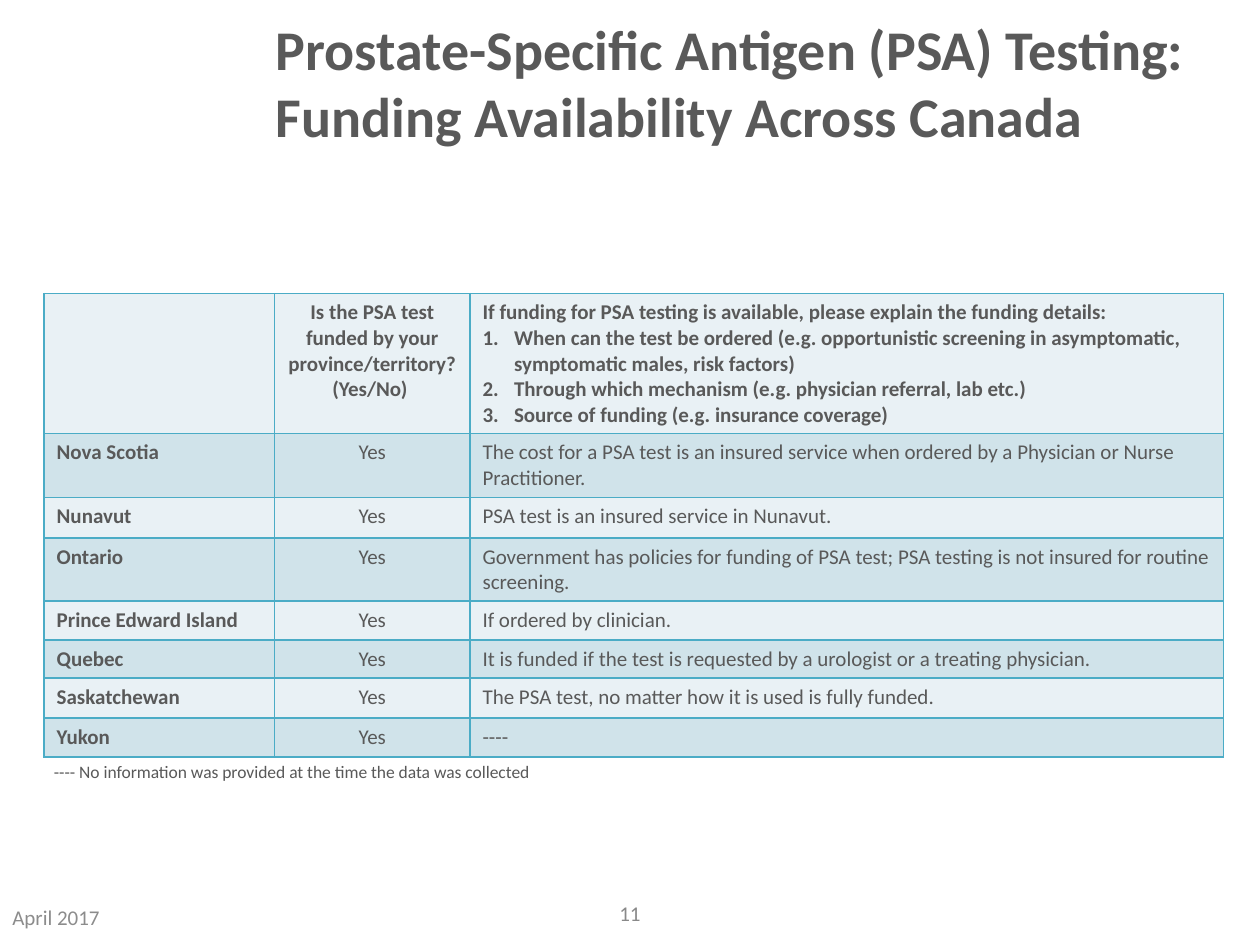
from dataclasses import dataclass

from lxml.etree import SubElement
from pptx import Presentation
from pptx.dml.color import RGBColor
from pptx.enum.text import MSO_ANCHOR as Anchor, PP_ALIGN as Align
from pptx.oxml.ns import qn
from pptx.util import Inches, Pt


@dataclass(frozen=True)
class Theme:
    font: str = "Calibri"
    text: str = "595959"
    date: str = "8C8C8C"
    number: str = "898989"
    border: str = "4BACC6"
    light_row: str = "E9F1F5"
    dark_row: str = "D0E3EA"
    title_size: int = 32
    body_size: int = 12
    note_size: int = 10


THEME = Theme()

COLUMN_WIDTHS = [1.83, 1.55, 5.98]
ROW_HEIGHTS = [1.11, 0.51, 0.32, 0.5, 0.31, 0.3, 0.32, 0.31]
HEADER = [
    [],
    ["Is the PSA test funded by your province/territory? ", "(Yes/No) "],
    ["If funding for PSA testing is available, please explain the funding details:",
     "When can the test be ordered (e.g. opportunistic screening in asymptomatic, "
     "symptomatic males, risk factors)",
     "Through which mechanism (e.g. physician referral, lab etc.)",
     "Source of funding (e.g. insurance coverage)"],
]
FUNDING = {
    "Nova Scotia": "The cost for a PSA test is an insured service when ordered by "
                   "a Physician or Nurse Practitioner.",
    "Nunavut": "PSA test is an insured service in Nunavut.",
    "Ontario": "Government has policies for funding of PSA test; PSA testing is "
               "not insured for routine screening.",
    "Prince Edward Island": "If ordered by clinician.",
    "Quebec": "It is funded if the test is requested by a urologist or a treating physician.",
    "Saskatchewan": "The PSA test, no matter how it is used is fully funded.",
    "Yukon": "----",
}


def style_runs(para, size, color=THEME.text, bold=False):
    for span in para.runs:
        span.font.name = THEME.font
        span.font.size = Pt(size)
        span.font.bold = bold
        span.font.color.rgb = RGBColor.from_string(color)


def add_text(page, box, text, size, color=THEME.text, bold=False,
             align=Align.LEFT, anchor=Anchor.MIDDLE):
    frame = page.shapes.add_textbox(*map(Inches, box)).text_frame
    frame.word_wrap = True
    frame.vertical_anchor = anchor
    frame.text = text
    para = frame.paragraphs[0]
    para.alignment = align
    style_runs(para, size, color, bold)


def number_paragraph(para):
    properties = para._p.get_or_add_pPr()
    properties.set("marL", str(Inches(0.25)))
    properties.set("indent", str(Inches(-0.25)))
    SubElement(properties, qn("a:buFont"), typeface="+mj-lt")
    SubElement(properties, qn("a:buAutoNum"), type="arabicPeriod")


def add_borders(cell):
    properties = cell._tc.get_or_add_tcPr()
    for position, side in enumerate(("lnL", "lnR", "lnT", "lnB")):
        line = properties.makeelement(qn(f"a:{side}"), {"w": str(Pt(1))})
        properties.insert(position, line)
        fill = SubElement(line, qn("a:solidFill"))
        SubElement(fill, qn("a:srgbClr"), val=THEME.border)


def fill_cell(cell, lines, color, bold, align):
    cell.fill.solid()
    cell.fill.fore_color.rgb = RGBColor.from_string(color)
    add_borders(cell)
    cell.text_frame.text = "\n".join(lines)
    for para in cell.text_frame.paragraphs:
        para.alignment = align
        style_runs(para, THEME.body_size, bold=bold)
    if not lines:
        cell.text_frame.paragraphs[0].font.size = Pt(THEME.body_size)


def add_funding_table(page, box):
    rows = [HEADER] + [[[place], ["Yes"], [detail]] for place, detail in FUNDING.items()]
    table = page.shapes.add_table(len(rows), len(COLUMN_WIDTHS), *map(Inches, box)).table
    table.first_row = table.horz_banding = False
    for column, width in zip(table.columns, COLUMN_WIDTHS):
        column.width = Inches(width)
    for row, height in zip(table.rows, ROW_HEIGHTS):
        row.height = Inches(height)

    for r, row in enumerate(rows):
        color = THEME.dark_row if r % 2 else THEME.light_row
        for c, lines in enumerate(row):
            fill_cell(table.cell(r, c), lines, color, bold=r == 0 or c == 0,
                      align=Align.CENTER if c == 1 else Align.LEFT)

    # Numbered questions below the lead-in of the last heading
    for para in table.cell(0, 2).text_frame.paragraphs[1:]:
        number_paragraph(para)


def add_footer(page, box):
    left, top, width, height = box
    add_text(page, (left, top + 0.03, 3.17, height), "April 2017",
             THEME.body_size, THEME.date)
    number_width = 2.33
    add_text(page, (left + (width - number_width) / 2, top, number_width, height),
             "11", THEME.body_size, THEME.number, align=Align.CENTER)


def main():
    deck = Presentation()
    deck.slide_width, deck.slide_height = Inches(10), Inches(7.5)
    page = deck.slides.add_slide(deck.slide_layouts[6])

    # Title
    add_text(page, (2.09, 0.29, 7.8, 0.71),
             "Prostate-Specific Antigen (PSA) Testing: Funding Availability Across Canada",
             THEME.title_size, bold=True)
    # Table and its note
    add_funding_table(page, (0.35, 2.33, sum(COLUMN_WIDTHS), sum(ROW_HEIGHTS)))
    add_text(page, (0.33, 5.99, 5, 0.27),
             "---- No information was provided at the time the data was collected",
             THEME.note_size, anchor=Anchor.TOP)
    # Date and page number
    add_footer(page, (0, 7.05, 10, 0.4))

    deck.save("out.pptx")


if __name__ == "__main__":
    main()
